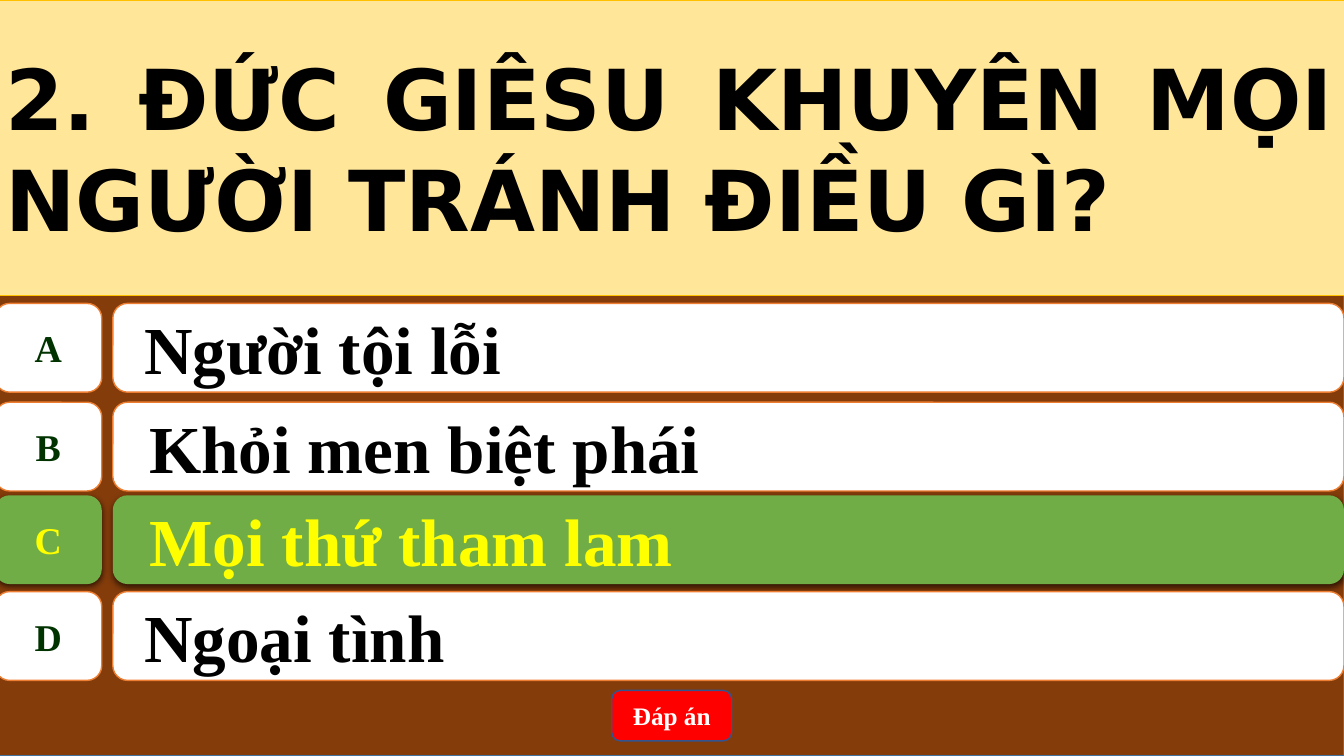
from dataclasses import dataclass

from lxml import etree
from pptx import Presentation
from pptx.dml.color import RGBColor
from pptx.enum.shapes import MSO_SHAPE
from pptx.enum.text import MSO_ANCHOR, MSO_AUTO_SIZE, PP_ALIGN
from pptx.oxml.ns import qn
from pptx.util import Pt

RECTANGLE = MSO_SHAPE.RECTANGLE
ROUNDED = MSO_SHAPE.ROUNDED_RECTANGLE
BADGE = MSO_SHAPE.FLOWCHART_ALTERNATE_PROCESS
MIDDLE = MSO_ANCHOR.MIDDLE
NO_AUTOFIT = MSO_AUTO_SIZE.NONE
LEFT, CENTER, JUSTIFY = PP_ALIGN.LEFT, PP_ALIGN.CENTER, PP_ALIGN.JUSTIFY
TITLE_ONLY = 5


@dataclass(frozen=True)
class Theme:
    board: str = "843C0B"
    board_line: str = "43739E"
    question: str = "FFE699"
    question_line: str = "FFC000"
    card: str = "FFFFFF"
    card_line: str = "ED7D31"
    correct: str = "70AD47"
    correct_text: str = "FFFF00"
    letter_text: str = "003300"
    text: str = "000000"
    button: str = "FF0000"
    button_line: str = "325491"
    button_text: str = "FFFFFF"
    shadow: str = "000000"
    heading_font: str = "DejaVu Sans"
    body_font: str = "Times New Roman"
    question_size: int = 60
    answer_size: int = 48
    letter_size: int = 27
    button_size: int = 18


THEME = Theme()
QUESTION = "2. ĐỨC GIÊSU KHUYÊN MỌI NGƯỜI TRÁNH ĐIỀU GÌ?"
ANSWERS = [
    ("A", "Người tội lỗi", 216.7, 12, False),
    ("B", "Khỏi men biệt phái", 287.3, 15.8, False),
    ("C", "Mọi thứ tham lam", 353.8, 15.8, True),
    ("D", "Ngoại tình", 422.6, 12, False),
]


def paint(shape, fill, line=None, width=1):
    shape.fill.solid()
    shape.fill.fore_color.rgb = RGBColor.from_string(fill)
    if line:
        shape.line.color.rgb = RGBColor.from_string(line)
        shape.line.width = Pt(width)
    else:
        shape.line.fill.background()


def add_box(page, kind, box, fill, line=None):
    shape = page.shapes.add_shape(kind, *map(Pt, box))
    shape.shadow.inherit = False
    paint(shape, fill, line)
    return shape


def write(shape, text, size, color, font=THEME.body_font, align=CENTER, wrap=True, indent=0):
    frame = shape.text_frame
    frame.word_wrap = wrap
    frame.auto_size = NO_AUTOFIT
    frame.vertical_anchor = MIDDLE
    frame.margin_left = Pt(7.2 + indent)
    para = frame.paragraphs[0]
    para.alignment = align
    span = para.add_run()
    span.text = text
    span.font.name = font
    span.font.size = Pt(size)
    span.font.bold = True
    span.font.color.rgb = RGBColor.from_string(color)


def cast_shadow(shape):
    effects = shape.element.spPr.find(qn("a:effectLst"))
    shadow = etree.SubElement(effects, qn("a:outerShdw"), blurRad=str(Pt(4.5)),
                              dist=str(Pt(1.5)), dir="5400000", algn="ctr", rotWithShape="0")
    color = etree.SubElement(shadow, qn("a:srgbClr"), val=THEME.shadow)
    etree.SubElement(color, qn("a:alpha"), val="63000")


def build_question(page, box):
    title = page.shapes.title
    title.left, title.top, title.width, title.height = map(Pt, box)
    paint(title, THEME.question, THEME.question_line, 0.5)
    write(title, QUESTION, THEME.question_size, THEME.text, THEME.heading_font, JUSTIFY)


def build_board(page, box):
    board = add_box(page, RECTANGLE, box, THEME.board, THEME.board_line)
    page.shapes.title.element.addprevious(board.element)


def build_answer(page, box, letter, answer, indent, correct):
    left, top, width, height = box
    badge_width, offset = 76.3, 84.2
    fill = THEME.correct if correct else THEME.card
    line = None if correct else THEME.card_line
    card = add_box(page, ROUNDED, (left + offset, top, width - offset, height), fill, line)
    badge = add_box(page, BADGE, (left, top, badge_width, height), fill, line)
    write(card, answer, THEME.answer_size, THEME.correct_text if correct else THEME.text,
          align=LEFT, indent=indent)
    write(badge, letter, THEME.letter_size,
          THEME.correct_text if correct else THEME.letter_text, wrap=False)
    if correct:
        cast_shadow(card)
        cast_shadow(badge)


def build_button(page, box):
    button = add_box(page, ROUNDED, box, THEME.button, THEME.button_line)
    write(button, "Đáp án", THEME.button_size, THEME.button_text)


def main():
    deck = Presentation()
    deck.slide_width, deck.slide_height = Pt(960), Pt(540)
    page = deck.slides.add_slide(deck.slide_layouts[TITLE_ONLY])
    left, width = -3.6, 963.6
    build_board(page, (left, 0, width, 540))
    build_question(page, (left, 0, width, 211))
    for letter, answer, top, indent, correct in ANSWERS:
        build_answer(page, (left, top, width, 63.4), letter, answer, indent, correct)
    build_button(page, (437, 493.2, 85.7, 36))
    deck.save("out.pptx")


if __name__ == "__main__":
    main()
